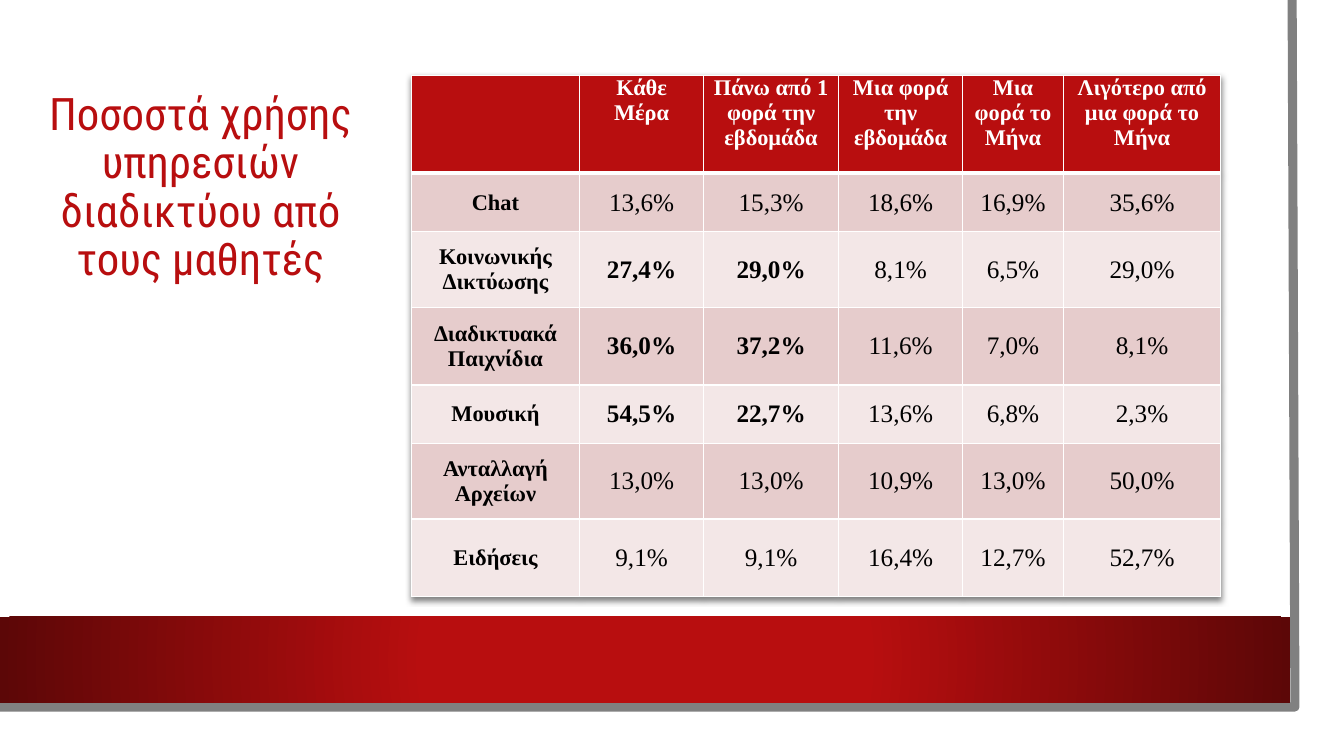
from lxml import etree
from pptx import Presentation
from pptx import util as u
from pptx.dml.color import RGBColor
from pptx.enum import shapes, text
from pptx.oxml import ns, parse_xml

COLORS = {
    "white": "FFFFFF",
    "black": "000000",
    "red": "B80E0F",
    "dark_red": "5C0707",
    "gray": "808080",
    "rose": "E6CCCC",
    "pale_rose": "F3E7E7",
}
NSDECL = ns.nsdecls("a")
SERIF = "Times New Roman"

HEADINGS = ["", "Κάθε Μέρα", "Πάνω από 1 φορά την εβδομάδα",
            "Μια φορά την εβδομάδα", "Μια φορά το Μήνα",
            "Λιγότερο από μια φορά το Μήνα"]
SERVICES = [
    ("Chat", "13,6% 15,3% 18,6% 16,9% 35,6%"),
    ("Κοινωνικής Δικτύωσης", "27,4% 29,0% 8,1% 6,5% 29,0%"),
    ("Διαδικτυακά Παιχνίδια", "36,0% 37,2% 11,6% 7,0% 8,1%"),
    ("Μουσική", "54,5% 22,7% 13,6% 6,8% 2,3%"),
    ("Ανταλλαγή Αρχείων", "13,0% 13,0% 10,9% 13,0% 50,0%"),
    ("Ειδήσεις", "9,1% 9,1% 16,4% 12,7% 52,7%"),
]
FREQUENT_SERVICES = {"Κοινωνικής Δικτύωσης", "Διαδικτυακά Παιχνίδια", "Μουσική"}
COLUMN_WIDTHS = [120.24, 88.56, 96.48, 88.56, 72, 112.32]
ROW_HEIGHTS = [69.84, 41.76, 54, 55.44, 41.76, 54, 55.44]


def rgb(name):
    return RGBColor.from_string(COLORS[name])


def write(frame, wording, size, color, font=SERIF, bold=False, spacing=None):
    paragraph = frame.paragraphs[0]
    paragraph.alignment = text.PP_ALIGN.CENTER
    if spacing:
        paragraph.line_spacing = spacing
    run = paragraph.add_run()
    run.text = wording
    run.font.name = font
    run.font.size = u.Pt(size)
    run.font.bold = bold
    run.font.color.rgb = rgb(color)


def add_frame(slide, left, top, width, height):
    right, bottom = left + width, top + height
    builder = slide.shapes.build_freeform(right - 2.2, top, scale=u.Pt(1))
    builder.add_line_segments([(right, bottom), (left, bottom - 0.7)], close=False)
    edge = builder.convert_to_shape()
    edge.shadow.inherit = False
    edge.fill.background()
    edge.line.color.rgb = rgb("gray")
    edge.line.width = u.Pt(6.5)


def add_band(slide, left, top, width, height):
    band = slide.shapes.add_shape(shapes.MSO_SHAPE.RECTANGLE, u.Pt(left), u.Pt(top),
                                  u.Pt(width), u.Pt(height))
    band.shadow.inherit = False
    band.line.fill.background()
    band.fill.gradient()
    for stop, color, position in zip(band.fill.gradient_stops,
                                     ("red", "dark_red"), (0.34, 1)):
        stop.color.rgb = rgb(color)
        stop.position = position
    linear = band.fill._xPr.find(".//" + ns.qn("a:lin"))
    linear.getparent().replace(linear, parse_xml(
        f'<a:path {NSDECL} path="circle">'
        '<a:fillToRect l="50000" t="50000" r="50000" b="50000"/></a:path>'))


def add_title(slide, left, top, width, height):
    title = slide.shapes.add_textbox(u.Pt(left), u.Pt(top), u.Pt(width), u.Pt(height))
    frame = title.text_frame
    frame.word_wrap = True
    frame.vertical_anchor = text.MSO_ANCHOR.BOTTOM
    write(frame, "Ποσοστά χρήσης υπηρεσιών διαδικτύου από τους μαθητές",
          32, "red", font="Roboto Condensed", spacing=0.9)


def set_borders(cell, top, bottom):
    properties = cell._tc.get_or_add_tcPr()
    sides = {"lnL": 1, "lnR": 1, "lnT": top, "lnB": bottom}
    for index, (side, width) in enumerate(sides.items()):
        properties.insert(index, parse_xml(
            f'<a:{side} {NSDECL} w="{u.Pt(width)}"><a:solidFill>'
            f'<a:srgbClr val="{COLORS["white"]}"/></a:solidFill></a:{side}>'))


def add_table_shadow(table):
    effects = etree.Element(ns.qn("a:effectLst"))
    effects.append(parse_xml(
        f'<a:outerShdw {NSDECL} blurRad="{u.Pt(4)}" dist="{u.Pt(2)}" dir="5400000">'
        f'<a:srgbClr val="{COLORS["black"]}"><a:alpha val="50000"/></a:srgbClr>'
        '</a:outerShdw>'))
    table._tbl.tblPr.insert(0, effects)


def add_usage_table(slide, left, top, width, height):
    rows = [HEADINGS] + [[service] + shares.split() for service, shares in SERVICES]
    table = slide.shapes.add_table(len(rows), len(HEADINGS), u.Pt(left), u.Pt(top),
                                   u.Pt(width), u.Pt(height)).table
    add_table_shadow(table)
    for column, column_width in zip(table.columns, COLUMN_WIDTHS):
        column.width = u.Pt(column_width)
    for r, (row, row_height) in enumerate(zip(rows, ROW_HEIGHTS)):
        table.rows[r].height = u.Pt(row_height)
        heading = r == 0
        fill = "red" if heading else ("pale_rose", "rose")[r % 2]
        for c, wording in enumerate(row):
            cell = table.cell(r, c)
            cell.margin_left = cell.margin_right = u.Pt(5.4)
            cell.margin_top = cell.margin_bottom = 0
            cell.vertical_anchor = (text.MSO_ANCHOR.TOP if heading
                                    else text.MSO_ANCHOR.MIDDLE)
            cell.fill.solid()
            cell.fill.fore_color.rgb = rgb(fill)
            set_borders(cell, 3 if r == 1 else 1, 3 if heading else 1)
            label = heading or c == 0
            if wording:
                write(cell.text_frame, wording, 16 if label else 18,
                      "white" if heading else "black",
                      bold=label or (c < 3 and row[0] in FREQUENT_SERVICES))


def main():
    deck = Presentation()
    deck.slide_width, deck.slide_height = u.Pt(960), u.Pt(540)
    slide = deck.slides.add_slide(deck.slide_layouts[6])
    slide.background.fill.solid()
    slide.background.fill.fore_color.rgb = rgb("white")
    add_frame(slide, 0, 0, 925.2, 505.4)
    add_band(slide, 0, 440.6, 921.6, 61.4)
    add_title(slide, 23.8, 48.2, 239, 159.1)
    add_usage_table(slide, 293.8, 54, sum(COLUMN_WIDTHS), sum(ROW_HEIGHTS))
    deck.save("out.pptx")


if __name__ == "__main__":
    main()
